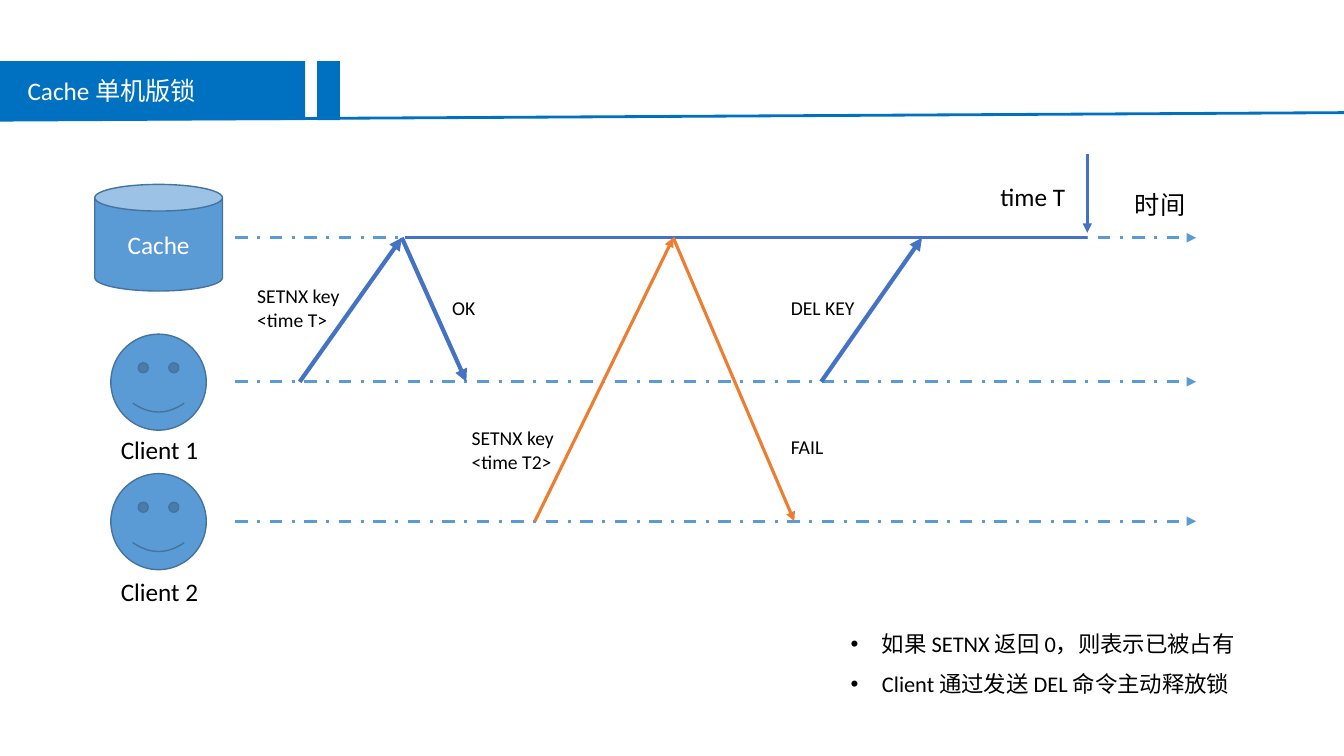
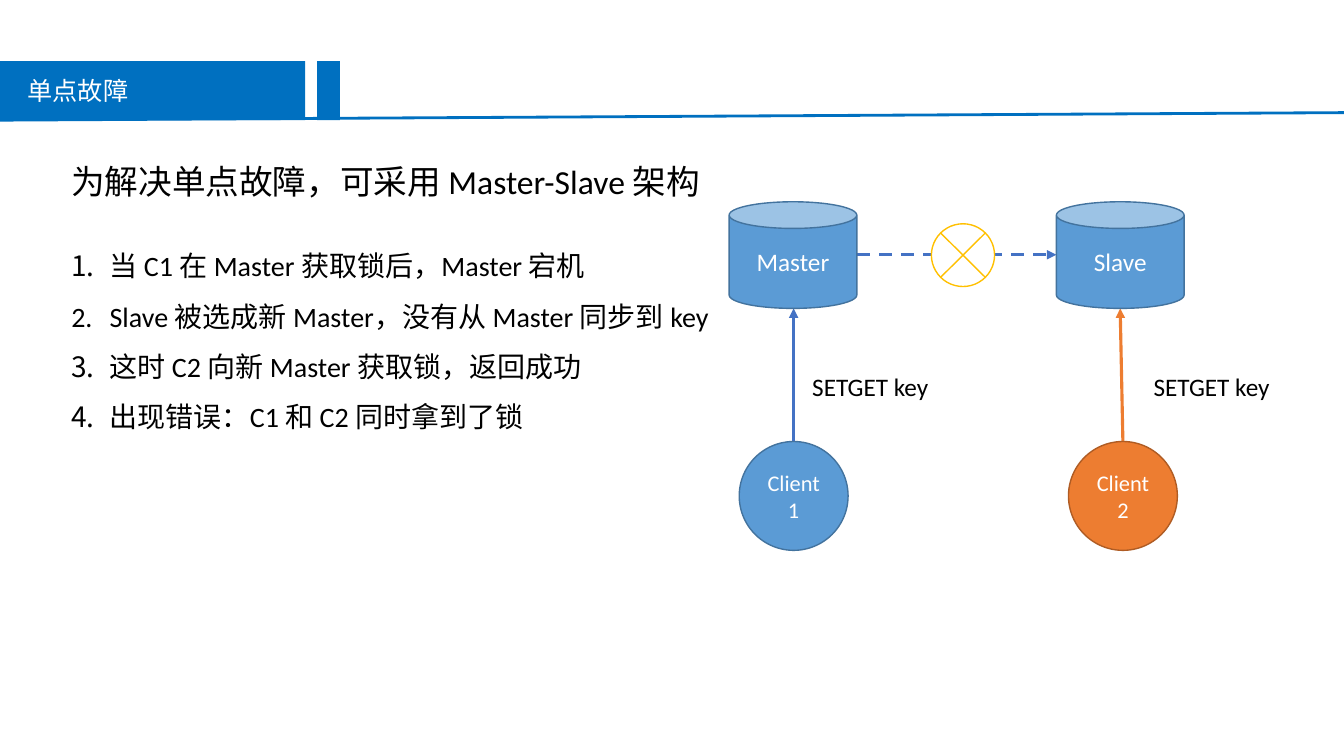
from lxml.etree import SubElement
from pptx import Presentation
from pptx.dml.color import RGBColor
from pptx.enum.dml import MSO_LINE
from pptx.enum.shapes import MSO_CONNECTOR, MSO_SHAPE
from pptx.enum.text import MSO_ANCHOR, MSO_AUTO_SIZE, PP_ALIGN
from pptx.oxml.ns import qn
from pptx.util import Inches, Pt

BAND = RGBColor(0x00, 0x70, 0xC0)
SKY = RGBColor(0x5B, 0x9B, 0xD5)
EDGE = RGBColor(0x43, 0x73, 0x9E)
BLUE = RGBColor(0x44, 0x72, 0xC4)
RUST = RGBColor(0xED, 0x7D, 0x31)
RIM = RGBColor(0xAF, 0x5C, 0x24)
GOLD = RGBColor(0xFF, 0xC0, 0x00)
WHITE = RGBColor(0xFF, 0xFF, 0xFF)
BLACK = RGBColor(0x00, 0x00, 0x00)

deck = Presentation()
deck.slide_width, deck.slide_height = Inches(13.33), Inches(7.5)


def at(*spots):
    """Turn x, y, x, y... in percent of the slide into lengths."""
    sides = (deck.slide_width, deck.slide_height)
    return [round(spot * sides[i % 2] / 100) for i, spot in enumerate(spots)]


def wire(slide, ends, color, width=2.25, dash=None, head=True):
    """Draw a straight line, with an arrowhead at its end if asked."""
    line = slide.shapes.add_connector(MSO_CONNECTOR.STRAIGHT, *at(*ends))
    line.line.color.rgb = color
    line.line.width = Pt(width)
    if dash:
        line.line.dash_style = dash
    if head:
        SubElement(line.line._get_or_add_ln(), qn("a:tailEnd"), type="triangle")
    SubElement(line.element.spPr, qn("a:effectLst"))
    return line


# Slides with their titles
page = deck.slide_layouts[1]
lock = deck.slides.add_slide(page)
fault = deck.slides.add_slide(page)
texts = []  # (shape, size, colour), styled at the end
for slide, title in ((lock, "Cache 单机版锁"), (fault, "单点故障")):
    head = slide.shapes.title
    head.left, head.top, head.width, head.height = at(1.3, 9.3, 21, 5.3)
    head.text_frame.text = title
    head.text_frame.vertical_anchor = MSO_ANCHOR.TOP
    head.text_frame.paragraphs[0].alignment = PP_ALIGN.LEFT
    texts.append((head, 18, WHITE))

# Title bands and rule, moved to the shared layout
trim = [wire(lock, (0, 15.9, 100, 14.9), BAND, 2, head=False)]
for left, width in ((0, 22.7), (23.6, 1.7)):
    band = lock.shapes.add_shape(MSO_SHAPE.RECTANGLE, *at(left, 8.1, width, 7.8))
    band.fill.solid()
    band.fill.fore_color.rgb = BAND
    band.line.fill.background()
    band.shadow.inherit = False
    trim.append(band)
for part in trim:
    page.shapes.element.append(part.element)

# Time lanes and the span of the lock
STORE, ONE, TWO = 31.45, 50.5, 68.95
for lane in (STORE, ONE, TWO):
    wire(lock, (17.5, lane, 89, lane), SKY, dash=MSO_LINE.DASH_DOT)
wire(lock, (30.1, STORE, 80.9, STORE), BLUE, head=False)
wire(lock, (80.9, 20.4, 80.9, 30.8), BLUE)

# Calls and answers between the lanes
for ends, color, width in (
    ((22.3, ONE, 29.9, STORE), BLUE, 3),
    ((29.9, STORE, 34.7, ONE), BLUE, 3),
    ((61.1, ONE, 68.6, STORE), BLUE, 3),
    ((39.8, TWO, 50.1, STORE), RUST, 2.25),
    ((50.1, STORE, 59.1, TWO), RUST, 2.25),
):
    wire(lock, ends, color, width)

# Links between the servers and from the clients
wire(fault, (63.8, 33.7, 78.6, 33.7), BLUE, dash=MSO_LINE.DASH)
calls = {
    "Client 1": wire(fault, (59.05, 58.4, 59.05, 40.8), BLUE),
    "Client 2": wire(fault, (83.55, 58.4, 83.35, 40.8), RUST),
}

# Servers, clients and the broken link
CAN, FACE, DISC = MSO_SHAPE.CAN, MSO_SHAPE.SMILEY_FACE, MSO_SHAPE.OVAL
CROSS = MSO_SHAPE.FLOWCHART_SUMMING_JUNCTION
sizes = {CAN: (9.5, 14.1), FACE: (7.1, 12.7), DISC: (8.1, 14.4), CROSS: (4.7, 8.3)}
for slide, kind, left, top, text, fill, edge in (
    (lock, CAN, 7.05, 24.4, "Cache", SKY, EDGE),
    (lock, FACE, 8.25, ONE - 6.3, "", SKY, EDGE),
    (lock, FACE, 8.25, TWO - 6.3, "", SKY, EDGE),
    (fault, CAN, 54.25, 26.7, "Master", SKY, EDGE),
    (fault, CAN, 78.6, 26.7, "Slave", SKY, EDGE),
    (fault, DISC, 55, 58.4, "Client 1", SKY, EDGE),
    (fault, DISC, 79.5, 58.4, "Client 2", RUST, RIM),
    (fault, CROSS, 69.3, 29.6, "", WHITE, GOLD),
):
    node = slide.shapes.add_shape(kind, *at(left, top, *sizes[kind]))
    node.fill.solid()
    node.fill.fore_color.rgb = fill
    node.line.color.rgb = edge
    node.line.width = Pt(1)
    node.shadow.inherit = False
    if text:
        node.text_frame.text = text
        node.text_frame.paragraphs[0].alignment = PP_ALIGN.CENTER
        texts.append((node, 16 if kind == DISC else 18, WHITE))
    if text in calls:
        calls[text].begin_connect(node, 0)

# Labels
for slide, left, top, width, size, text in (
    (lock, 83.7, 24.4, 6.2, 18, "时间"),
    (lock, 73.7, 23.3, 6.8, 18, "time T"),
    (lock, 8.25, 56.8, 8.3, 18, "Client 1"),
    (lock, 8.25, 75.6, 8.3, 18, "Client 2"),
    (lock, 18.4, 36.9, 8.9, 14, "SETNX key <time T>"),
    (lock, 34.35, 55.7, 8.9, 14, "SETNX key <time T2>"),
    (lock, 32.9, 38.5, 8.9, 14, "OK"),
    (lock, 58.1, 38.5, 8.9, 14, "DEL KEY"),
    (lock, 58.1, 56.9, 8.9, 14, "FAIL"),
    (fault, 59.7, 48.5, 11.6, 18, "SETGET key"),
    (fault, 85.1, 48.5, 11.6, 18, "SETGET key"),
):
    label = slide.shapes.add_textbox(*at(left, top, width, 5.3))
    label.text_frame.word_wrap = True
    label.text_frame.text = text
    texts.append((label, size, BLACK))

# Lists in the body placeholders
notes = ("如果 SETNX 返回 0，则表示已被占有", "Client 通过发送 DEL 命令主动释放锁")
steps = (
    "为解决单点故障，可采用 Master-Slave 架构",
    "当 C1 在 Master 获取锁后，Master 宕机",
    "Slave 被选成新 Master，没有从 Master 同步到 key",
    "这时 C2 向新 Master 获取锁，返回成功",
    "出现错误：C1 和 C2 同时拿到了锁",
)
for slide, spot, lines, size, dent, face, mark in (
    (lock, (62.55, 80.9, 32.7, 12.1), notes, 16, 0.31, "Arial", ("buChar", "char", "•")),
    (fault, (4.55, 20.6, 49, 37.7), steps, 20, 0.38, "Calibri",
     ("buAutoNum", "type", "arabicPeriod")),
):
    body = slide.placeholders[1]
    body.left, body.top, body.width, body.height = at(*spot)
    body.text_frame.text = "\n".join(lines)
    body.text_frame.auto_size = MSO_AUTO_SIZE.SHAPE_TO_FIT_TEXT
    texts.append((body, size, BLACK))
    for para in body.text_frame.paragraphs:
        lead = para.text == steps[0]
        para.space_before = Pt(22 if para.text == steps[1] else 0)
        para.line_spacing = 1.0 if lead else 1.5
        props = para._p.get_or_add_pPr()
        props.set("marL", str(0 if lead else Inches(dent)))
        props.set("indent", str(0 if lead else -Inches(dent)))
        if lead:
            SubElement(props, qn("a:buNone"))
        else:
            tag, key, value = mark
            SubElement(props, qn("a:buFont"), typeface=face)
            SubElement(props, qn("a:" + tag), {key: value})

# Fonts
for shape, size, color in texts:
    for para in shape.text_frame.paragraphs:
        para.font.name = "Calibri"
        para.font.size = Pt(24 if para.text == steps[0] else size)
        para.font.color.rgb = color

deck.save("out.pptx")
